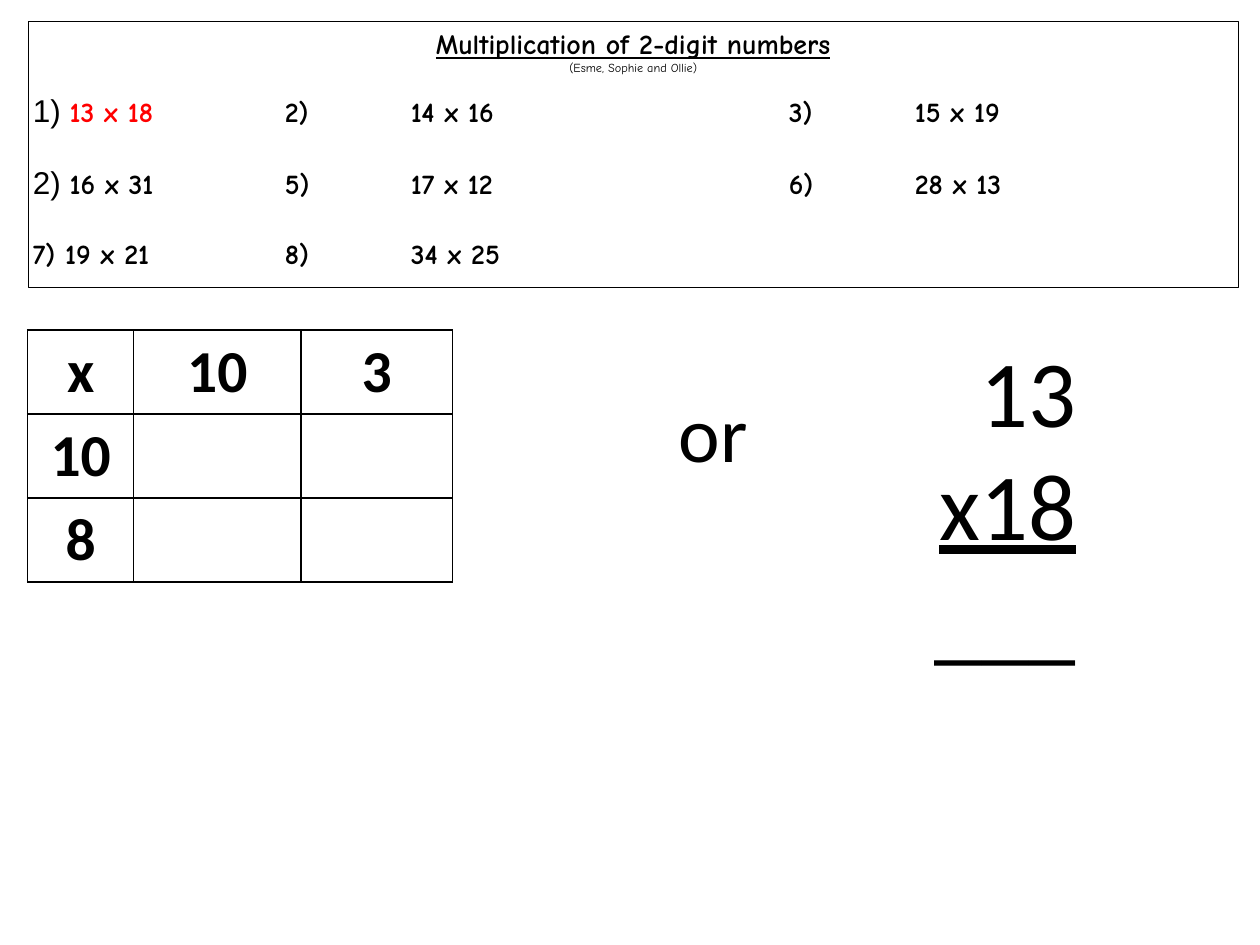
from lxml import etree
from pptx import Presentation
from pptx.dml.color import RGBColor
from pptx.enum.shapes import MSO_SHAPE
from pptx.enum.text import MSO_ANCHOR, PP_ALIGN
from pptx.oxml.ns import qn
from pptx.util import Inches, Pt

RECT = MSO_SHAPE.RECTANGLE
TOP, MIDDLE = MSO_ANCHOR.TOP, MSO_ANCHOR.MIDDLE
LEFT, CENTER, RIGHT = PP_ALIGN.LEFT, PP_ALIGN.CENTER, PP_ALIGN.RIGHT
BLACK = RGBColor(0, 0, 0)
RED = RGBColor(255, 0, 0)
WHITE = RGBColor(255, 255, 255)
COMIC, SANS, PLAIN = "Comic Neue", "Calibri", "Arial"

# Content
TITLE = "Multiplication of 2-digit numbers"
NAMES = "(Esme, Sophie and Ollie)"
# (label, first sum, its colour, further sums, space before)
SUMS = [
    ("1) ", "13 x 18", RED, ["2)", "14 x 16", "3)", "15 x 19"], 9),
    ("2) ", "16 x 31", BLACK, ["5)", "17 x 12", "6)", "28 x 13"], 20),
    ("", "7) 19 x 21", BLACK, ["8)", "34 x 25"], 20),
]
STOPS = [2, 3, 6, 7]
GRID = [["x", "10", "3"], ["10", "", ""], ["8", "", ""]]
WIDTHS = [0.84, 1.33, 1.2]
COLUMN = [("13", False), ("x18", True), ("___", False)]


def write(para, text, size, font, color=BLACK, bold=False, under=False, align=LEFT):
    para.alignment = align
    run = para.add_run()
    run.text = text
    face = run.font
    face.size, face.name = Pt(size), font
    face.bold, face.underline = bold, under
    face.color.rgb = color


def next_para(frame):
    first = frame.paragraphs[0]
    return frame.add_paragraph() if first.runs else first


def set_tabs(para, stops):
    tabs = etree.SubElement(para._p.get_or_add_pPr(), qn("a:tabLst"))
    for stop in stops:
        etree.SubElement(tabs, qn("a:tab"), pos=str(Inches(stop)), algn="l")


def set_edges(cell):
    props = cell._tc.get_or_add_tcPr()
    for spot, side in enumerate(("lnL", "lnR", "lnT", "lnB")):
        line = etree.Element(qn("a:" + side), w=str(Pt(1)))
        fill = etree.SubElement(line, qn("a:solidFill"))
        etree.SubElement(fill, qn("a:srgbClr"), val=str(BLACK))
        props.insert(spot, line)


def add_text(slide, left, top, width, height):
    frame = slide.shapes.add_textbox(
        Inches(left), Inches(top), Inches(width), Inches(height)).text_frame
    frame.word_wrap = True
    return frame


def add_sums(slide):
    box = slide.shapes.add_shape(
        RECT, Inches(0.22), Inches(0.17), Inches(9.61), Inches(2.11))
    box.shadow.inherit = False
    box.fill.background()
    box.line.color.rgb = BLACK
    box.line.width = Pt(0.25)
    frame = box.text_frame
    frame.word_wrap = True
    frame.vertical_anchor = TOP
    frame.margin_left = frame.margin_right = Inches(0.04)
    frame.margin_top = frame.margin_bottom = Inches(0.04)
    write(next_para(frame), TITLE, 16, COMIC, bold=True, under=True, align=CENTER)
    write(next_para(frame), NAMES, 7, COMIC, align=CENTER)
    for label, first, color, rest, gap in SUMS:
        para = next_para(frame)
        para.space_before = Pt(gap)
        set_tabs(para, STOPS)
        if label:
            write(para, label, 18, PLAIN)
        write(para, first, 16, COMIC, color, bold=True)
        write(para, "\t" + "\t".join(rest), 16, COMIC, bold=True)


def add_grid(slide):
    table = slide.shapes.add_table(
        len(GRID), len(WIDTHS), Inches(0.22), Inches(2.62),
        Inches(sum(WIDTHS)), Inches(2)).table
    for col, width in zip(table.columns, WIDTHS):
        col.width = Inches(width)
    for r, row in enumerate(GRID):
        for c, text in enumerate(row):
            cell = table.cell(r, c)
            cell.fill.solid()
            cell.fill.fore_color.rgb = WHITE
            cell.vertical_anchor = MIDDLE
            cell.margin_top = cell.margin_bottom = 0
            set_edges(cell)
            if text:
                write(cell.text_frame.paragraphs[0], text, 34, SANS,
                      bold=True, align=CENTER)


def main():
    deck = Presentation()
    deck.slide_width, deck.slide_height = Inches(10), Inches(7.5)
    slide = deck.slides.add_slide(deck.slide_layouts[6])

    # Exercises and grid method
    add_sums(slide)
    add_grid(slide)

    # Column method
    frame = add_text(slide, 6.48, 2.59, 3.03, 2.83)
    frame.margin_right = Inches(0.97)
    for text, under in COLUMN:
        write(next_para(frame), text, 54, SANS, under=under, align=RIGHT)

    # Word between the two methods
    frame = add_text(slide, 5.29, 3, 1, 0.86)
    write(next_para(frame), "or", 45, SANS)

    deck.save("out.pptx")


if __name__ == "__main__":
    main()
